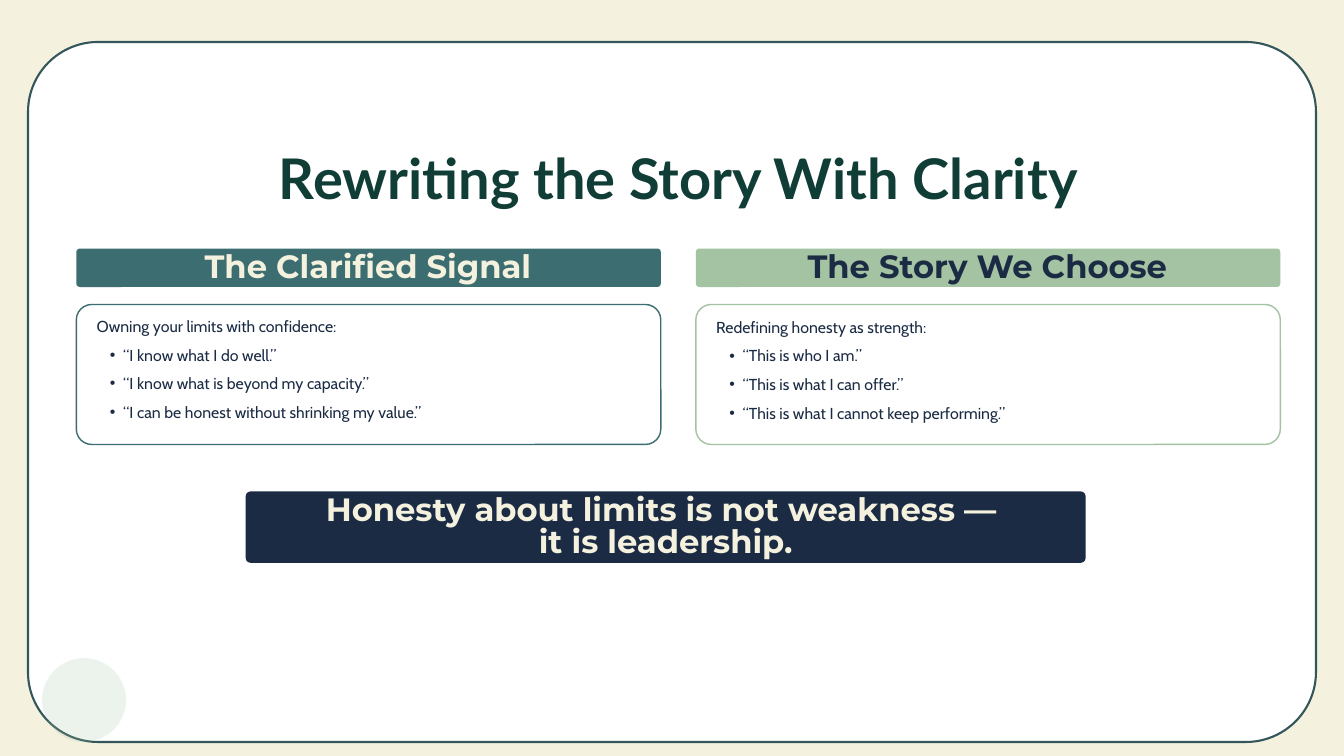
from lxml import etree
from pptx import Presentation
from pptx.dml.color import RGBColor
from pptx.enum.shapes import MSO_SHAPE
from pptx.enum.text import PP_ALIGN
from pptx.oxml.ns import qn
from pptx.util import Emu, Pt

ROUNDED, OVAL = MSO_SHAPE.ROUNDED_RECTANGLE, MSO_SHAPE.OVAL
LEFT, CENTER = PP_ALIGN.LEFT, PP_ALIGN.CENTER
PX = 9525

COLORS = {
    "cream": "F4F1DE", "white": "FFFFFF", "frame": "33565A", "title": "103E37",
    "teal": "3C6E71", "sage": "A4C3A2", "navy": "1B2B44",
}
TITLE = "Rewriting the Story With Clarity"
COLUMNS = [
    {"heading": "The Clarified Signal", "accent": "teal", "ink": "cream",
     "intro": "Owning your limits with confidence:",
     "quotes": ["“I know what I do well.”",
                "“I know what is beyond my capacity.”",
                "“I can be honest without shrinking my value.”"]},
    {"heading": "The Story We Choose", "accent": "sage", "ink": "navy",
     "intro": "Redefining honesty as strength:",
     "quotes": ["“This is who I am.”",
                "“This is what I can offer.”",
                "“This is what I cannot keep performing.”"]},
]
TAKEAWAY = ["Honesty about limits is not weakness — ", "it is leadership."]

COLUMN_LEFT, COLUMN_WIDTH, COLUMN_STEP = 109, 835, 885


def px(*lengths):
    return [Emu(length * PX) for length in lengths]


def color(name):
    return RGBColor.from_string(COLORS[name])


def add_panel(slide, box, fill, radius=None, line=None, line_width=0, alpha=None):
    panel = slide.shapes.add_shape(ROUNDED if radius else OVAL, *px(*box))
    panel.shadow.inherit = False
    if radius:
        panel.adjustments[0] = radius / min(box[2:])
    panel.fill.solid()
    panel.fill.fore_color.rgb = color(fill)
    if alpha:
        tint = panel.fill._xPr.find(".//" + qn("a:srgbClr"))
        etree.SubElement(tint, qn("a:alpha")).set("val", str(alpha * 1000))
    if line:
        panel.line.color.rgb = color(line)
        panel.line.width = Pt(line_width)
    else:
        panel.line.fill.background()


def add_bullet(paragraph):
    paragraph.level = 1
    properties = paragraph._p.get_or_add_pPr()
    properties.set("marL", str(38 * PX))
    properties.set("indent", str(-19 * PX))
    etree.SubElement(properties, qn("a:buFont")).set("typeface", "Arial")
    etree.SubElement(properties, qn("a:buChar")).set("char", "•")


def add_text(slide, box, lines, font, size, ink, spacing, bold=True,
             align=CENTER, bullets_from=None):
    frame = slide.shapes.add_textbox(*px(*box)).text_frame
    frame.word_wrap = True
    frame.margin_left = frame.margin_right = frame.margin_top = frame.margin_bottom = 0
    frame.text = "\n".join(lines)
    for index, paragraph in enumerate(frame.paragraphs):
        if bullets_from is not None and index >= bullets_from:
            add_bullet(paragraph)
        paragraph.alignment = align
        paragraph.line_spacing = Pt(spacing)
        for run in paragraph.runs:
            run.font.name = font
            run.font.size = Pt(size)
            run.font.bold = bold
            run.font.color.rgb = color(ink)


def add_column(slide, index, column):
    left = COLUMN_LEFT + index * COLUMN_STEP
    add_panel(slide, (left, 355, COLUMN_WIDTH, 55), column["accent"], 5)
    add_text(slide, (left - 1, 361, COLUMN_WIDTH, 48), [column["heading"]],
             "Montserrat", 34.5, column["ink"], 34.5)
    add_panel(slide, (left, 435, COLUMN_WIDTH, 200), "white", 22, column["accent"], 1.5)
    add_text(slide, (left + 29, 439 + index, 775, 197),
             [column["intro"], *column["quotes"]], "Cabin", 17, "navy", 30.6,
             bold=False, align=LEFT, bullets_from=1)


def main():
    deck = Presentation()
    deck.slide_width, deck.slide_height = px(1920, 1080)
    slide = deck.slides.add_slide(deck.slide_layouts[6])
    slide.background.fill.solid()
    slide.background.fill.fore_color.rgb = color("cream")

    add_panel(slide, (40, 60, 1840, 1000), "white", 100, "frame", 2.25)
    add_text(slide, (169, 221, 1600, 103), [TITLE], "Lato", 60, "title", 60)
    for index, column in enumerate(COLUMNS):
        add_column(slide, index, column)
    add_panel(slide, (351, 702, 1200, 102), "navy", 7)
    add_text(slide, (351, 708, 1200, 94), TAKEAWAY, "Montserrat", 34.5, "cream", 34.5)
    add_panel(slide, (60, 940, 120, 120), "sage", alpha=20)
    deck.save("out.pptx")


if __name__ == "__main__":
    main()
